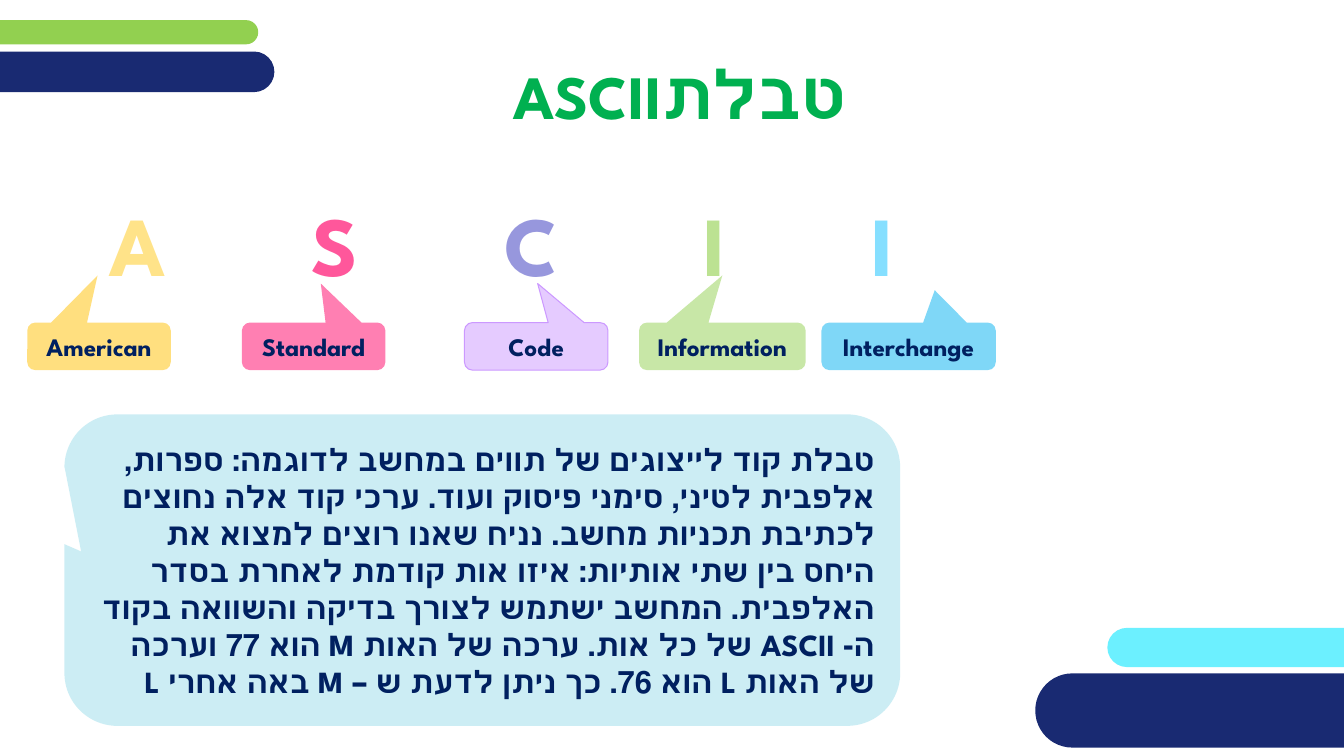
from dataclasses import dataclass

from lxml import etree
from pptx import Presentation
from pptx.dml.color import RGBColor
from pptx.enum.shapes import MSO_SHAPE
from pptx.enum.text import MSO_ANCHOR, PP_ALIGN
from pptx.oxml.ns import qn
from pptx.util import Pt

ROUNDED = MSO_SHAPE.ROUNDED_RECTANGLE
CALLOUT = MSO_SHAPE.ROUNDED_RECTANGULAR_CALLOUT
CENTER, RIGHT = PP_ALIGN.CENTER, PP_ALIGN.RIGHT
MIDDLE = MSO_ANCHOR.MIDDLE


@dataclass(frozen=True)
class Theme:
    font: str = "League Spartan"
    navy: str = "192A72"
    cyan: str = "6CF0FF"
    lime: str = "92D050"
    title: str = "00B050"
    text: str = "002060"
    panel: str = "9ADDEA"
    title_sizes: tuple = (48, 44, 40)
    letter_size: int = 60
    label_size: int = 18
    body_size: int = 22


theme = Theme()


def add_run(paragraph, text, size, color):
    run = paragraph.add_run()
    run.text = text
    run.font.name = theme.font
    run.font.size = Pt(size)
    run.font.bold = True
    run.font.color.rgb = RGBColor.from_string(color)
    return run


def add_filled(kind, box, color, adjustments, alpha=100):
    shape = slide.shapes.add_shape(kind, *[Pt(value) for value in box])
    shape.shadow.inherit = False
    shape.fill.solid()
    shape.fill.fore_color.rgb = RGBColor.from_string(color)
    shape.line.fill.background()
    for index, value in enumerate(adjustments):
        shape.adjustments[index] = value
    if alpha < 100:
        fill_color = shape.fill._xPr.find(qn("a:solidFill"))[0]
        etree.SubElement(fill_color, qn("a:alpha"), val=str(alpha * 1000))
    return shape


presentation = Presentation()
presentation.slide_width, presentation.slide_height = Pt(960), Pt(540)
slide = presentation.slides.add_slide(presentation.slide_layouts[6])

# Corner bars, running past the slide edges
bars = [
    ((791, 448.5, 244, 28), theme.cyan),
    ((-20, 14.4, 204.5, 17.3), theme.lime),
    ((-38, 36.8, 234, 29), theme.navy),
    ((739.5, 481, 296, 53), theme.navy),
]
for box, color in bars:
    add_filled(ROUNDED, box, color, [0.5])

# Title
title = slide.shapes.add_textbox(Pt(0), Pt(16.5), Pt(960), Pt(106)).text_frame
title.word_wrap = True
title.vertical_anchor = MIDDLE
paragraph = title.paragraphs[0]
paragraph.alignment = CENTER
paragraph.line_spacing = 0.9
paragraph._p.get_or_add_pPr().set("rtl", "1")
for text, size in zip(("טבלת", "ASCII", " "), theme.title_sizes):
    add_run(paragraph, text, size, theme.title)

# Large letters on centred tab stops
letters = [
    ("A", "FFE389", 71),
    ("S", "FF579B", 212),
    ("C", "9797DD", 352.5),
    ("I", "BCE292", 483.5),
    ("I", "85DFFF", 603.5),
]
acronym = slide.shapes.add_textbox(Pt(20), Pt(134), Pt(680), Pt(80)).text_frame
acronym.word_wrap = True
paragraph = acronym.paragraphs[0]
tab_stops = etree.SubElement(paragraph._p.get_or_add_pPr(), qn("a:tabLst"))
for letter, color, position in letters:
    etree.SubElement(tab_stops, qn("a:tab"), pos=str(Pt(position)), algn="ctr")
    run = add_run(paragraph, "\t" + letter, theme.letter_size, color)
    outline = etree.Element(qn("a:ln"), w=str(Pt(1.75)))
    outline_fill = etree.SubElement(outline, qn("a:solidFill"))
    etree.SubElement(outline_fill, qn("a:srgbClr"), val=color)
    run.font._element.insert(0, outline)

# Word under each letter: left, width, colour, pointer tip
words = [
    ("American", 19.5, 102.5, "FFC000", (-0.01, -1.49)),
    ("Standard", 172.8, 102.5, "FF0066", (0.05, -1.32)),
    ("Code", 331.8, 102.5, "CC99FF", (0.01, -1.32)),
    ("Information", 456.5, 119, "92D050", (0, -1.49)),
    ("Interchange", 586.8, 124.5, "00B0F0", (0.15, -1.18)),
]
for word, left, width, color, tip in words:
    label = add_filled(CALLOUT, (left, 230.4, width, 34), color, (*tip, 0.17), 50)
    if word == "Code":
        label.line.color.rgb = RGBColor.from_string(color)
        label.line.width = Pt(0.75)
    label.text_frame.vertical_anchor = MIDDLE
    paragraph = label.text_frame.paragraphs[0]
    paragraph.alignment = CENTER
    add_run(paragraph, word, theme.label_size, theme.text)

# Explanation panel
explanation = (
    "טבלת קוד לייצוגים של תווים במחשב לדוגמה: ספרות, אלפבית לטיני, "
    "סימני פיסוק ועוד. ערכי קוד אלה נחוצים לכתיבת תכניות מחשב. "
    "נניח שאנו רוצים למצוא את היחס בין שתי אותיות: איזו אות קודמת לאחרת "
    "בסדר האלפבית. המחשב ישתמש לצורך בדיקה והשוואה בקוד ה- ASCII של כל אות. "
    "ערכה של האות M הוא 77 וערכה של האות L הוא 76. "
    "כך ניתן לדעת ש – M באה אחרי L "
)
panel = add_filled(CALLOUT, (46, 296, 597, 222.5), theme.panel, (-0.48, -0.06, 0.17), 50)
panel.text_frame.word_wrap = True
panel.text_frame.vertical_anchor = MIDDLE
paragraph = panel.text_frame.paragraphs[0]
paragraph.alignment = RIGHT
paragraph._p.get_or_add_pPr().set("rtl", "1")
add_run(paragraph, explanation, theme.body_size, theme.text)

presentation.save("out.pptx")
